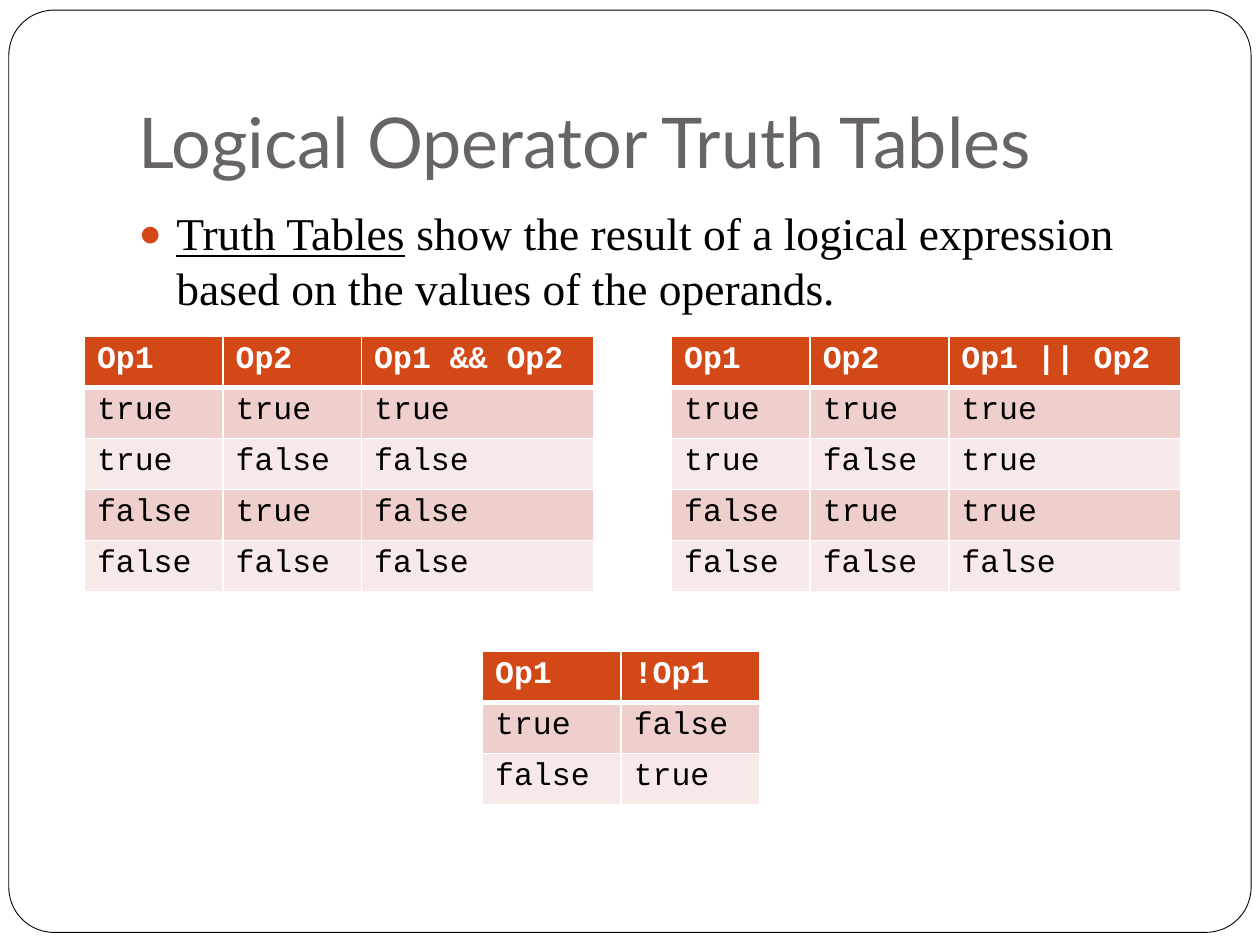
"""Build a slide of truth tables for the logical operators."""
import itertools

import pptx
import pptx.dml.color
import pptx.enum.shapes
import pptx.enum.text
import pptx.oxml
import pptx.oxml.ns
import pptx.util

Inches = pptx.util.Inches
Pt = pptx.util.Pt
RGBColor = pptx.dml.color.RGBColor

WHITE = RGBColor(0xFF, 0xFF, 0xFF)
BLACK = RGBColor(0, 0, 0)
GREY = RGBColor(0x69, 0x64, 0x64)
RUST = RGBColor(0xD3, 0x48, 0x17)
ROSE = RGBColor(0xEF, 0xCF, 0xCC)
BLUSH = RGBColor(0xF7, 0xE9, 0xE8)
SPACE = pptx.oxml.ns.nsdecls("a")


def place(shape, left, top, width, height):
    """Set the position and size of a shape in inches."""
    shape.left, shape.top = Inches(left), Inches(top)
    shape.width, shape.height = Inches(width), Inches(height)


def style(run, face, size, color, bold=False):
    """Set the font of a run."""
    font = run.font
    font.name, font.size, font.bold = face, Pt(size), bold
    font.color.rgb = color


def add_frame(slide):
    """Draw the rounded frame behind everything else."""
    kind = pptx.enum.shapes.MSO_SHAPE.ROUNDED_RECTANGLE
    frame = slide.shapes.add_shape(
        kind, Inches(0.07), Inches(0.08), Inches(9.86), Inches(7.32))
    frame.adjustments[0] = 0.049
    frame.shadow.inherit = False
    frame.fill.solid()
    frame.fill.fore_color.rgb = WHITE
    frame.line.color.rgb = BLACK
    frame.line.width = Pt(0.5)
    frame.element.getparent().insert(2, frame.element)


def fill_title(shape, text):
    """Write the title at the bottom left of its box."""
    place(shape, 1, 0.3, 8.5, 1.25)
    frame = shape.text_frame
    frame.text = text
    frame.vertical_anchor = pptx.enum.text.MSO_ANCHOR.BOTTOM
    frame.margin_bottom = Inches(0.1)
    line = frame.paragraphs[0]
    line.alignment = pptx.enum.text.PP_ALIGN.LEFT
    style(line.runs[0], "Lato", 40, GREY)


def fill_body(shape, term, rest):
    """Write a bullet that starts with an underlined term."""
    place(shape, 1, 1.58, 8.5, 5)
    line = shape.text_frame.paragraphs[0]
    for text in (term, rest):
        run = line.add_run()
        run.text = text
        style(run, "Times New Roman", 26, BLACK)
        run.font.underline = text == term
    line.space_before = Pt(5.8)
    props = line._p.get_or_add_pPr()
    props.set("marL", str(Inches(0.3)))
    props.set("indent", str(Inches(-0.3)))
    for part in (
            f'<a:buClr {SPACE}><a:srgbClr val="{RUST}"/></a:buClr>',
            f'<a:buSzPct {SPACE} val="85000"/>',
            f'<a:buChar {SPACE} char="●"/>'):
        props.append(pptx.oxml.parse_xml(part))


def set_edge(cell, side, width):
    """Add a white line to one side of a cell."""
    cell._tc.get_or_add_tcPr().append(pptx.oxml.parse_xml(
        f'<a:ln{side} {SPACE} w="{Pt(width)}"><a:solidFill>'
        f'<a:srgbClr val="{WHITE}"/></a:solidFill></a:ln{side}>'))


def fill_cell(cell, text, row):
    """Write and colour a cell by the row it is in."""
    head = row == 0
    for side in "LRTB":
        thick = (side, row) in (("B", 0), ("T", 1))
        set_edge(cell, side, 3 if thick else 1)
    cell.fill.solid()
    cell.fill.fore_color.rgb = RUST if head else ROSE if row % 2 else BLUSH
    cell.text_frame.text = text
    run = cell.text_frame.paragraphs[0].runs[0]
    style(run, "Courier New", 18, WHITE if head else BLACK, head)


def add_truth(slide, left, top, widths, heads, rule):
    """Add the truth table of a rule for all values of its operands."""
    cases = itertools.product((True, False), repeat=len(heads) - 1)
    rows = [heads] + [
        [str(value).lower() for value in (*case, rule(*case))]
        for case in cases]
    table = slide.shapes.add_table(
        len(rows), len(heads), Inches(left), Inches(top),
        Inches(sum(widths)), Inches(0.405 * len(rows))).table
    for column, width in zip(table.columns, widths):
        column.width = Inches(width)
    for r, row in enumerate(rows):
        for c, text in enumerate(row):
            fill_cell(table.cell(r, c), text, r)


def main():
    """Build and save the slide."""
    deck = pptx.Presentation()
    deck.slide_width, deck.slide_height = Inches(10), Inches(7.5)
    slide = deck.slides.add_slide(deck.slide_layouts[1])
    add_frame(slide)
    fill_title(slide.shapes.title, "Logical Operator Truth Tables")
    fill_body(slide.placeholders[1], "Truth Tables",
              " show the result of a logical expression"
              " based on the values of the operands.")
    wide = (1.1, 1.1, 1.84)
    add_truth(slide, 0.67, 2.67, wide, ("Op1", "Op2", "Op1 && Op2"),
              lambda a, b: a and b)
    add_truth(slide, 5.33, 2.67, wide, ("Op1", "Op2", "Op1 || Op2"),
              lambda a, b: a or b)
    add_truth(slide, 3.83, 5.17, (1.1, 1.1), ("Op1", "!Op1"),
              lambda a: not a)
    deck.save("out.pptx")


if __name__ == "__main__":
    main()
